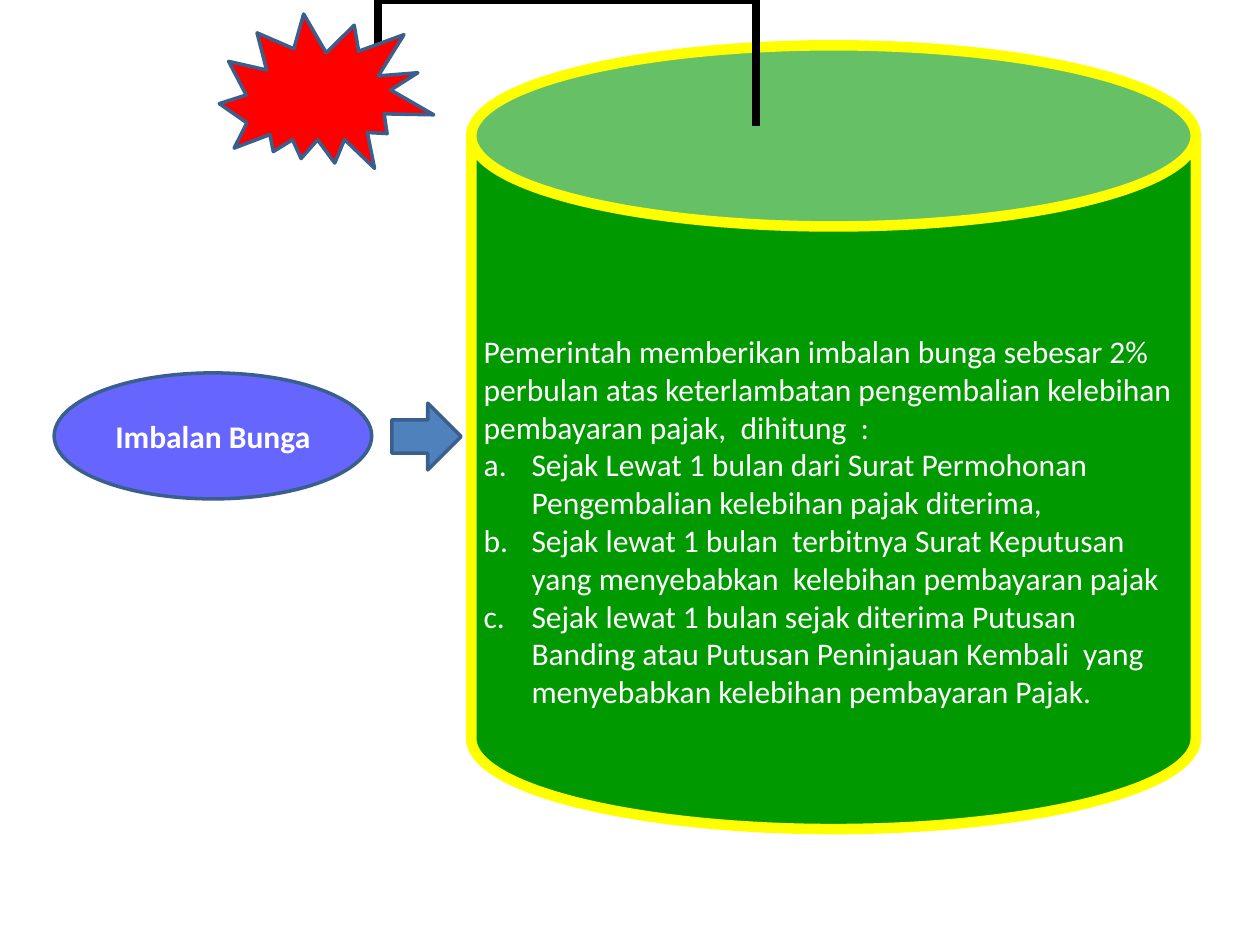
from lxml import etree
from pptx import Presentation
from pptx.dml.color import RGBColor
from pptx.enum.shapes import MSO_SHAPE
from pptx.enum.text import MSO_ANCHOR, PP_ALIGN
from pptx.oxml.ns import qn
from pptx.util import Inches, Pt

OVAL, ARROW = MSO_SHAPE.OVAL, MSO_SHAPE.RIGHT_ARROW
CAN, BURST = MSO_SHAPE.CAN, MSO_SHAPE.EXPLOSION2
LEFT, CENTER, MIDDLE = PP_ALIGN.LEFT, PP_ALIGN.CENTER, MSO_ANCHOR.MIDDLE

# Content
TOPIC = "Imbalan Bunga"
INTRO = ("Pemerintah memberikan imbalan bunga sebesar 2%  perbulan atas keterlambatan "
         "pengembalian kelebihan pembayaran pajak,  dihitung  :")
CONDITIONS = [
    "Sejak Lewat 1 bulan dari Surat Permohonan Pengembalian kelebihan pajak diterima,",
    "Sejak lewat 1 bulan  terbitnya Surat Keputusan yang menyebabkan  kelebihan "
    "pembayaran pajak",
    "Sejak lewat 1 bulan sejak diterima Putusan Banding atau Putusan Peninjauan Kembali  "
    "yang menyebabkan kelebihan pembayaran Pajak.",
]

# Fuse: start point, then cubic curves as (control, control, end)
FUSE_START = (6.36, 1.02)
FUSE_CURVES = [
    ((6.3, 0.72), (6.23, 0.42), (5.74, 0.29)),
    ((5.25, 0.16), (3.42, 0.24), (3.42, 0.24)),
    ((3.36, 0.24), (3.15, 0.21), (3.03, 0.24)),
    ((2.91, 0.28), (2.71, 0.44), (2.71, 0.44)),
    ((2.69, 0.48), (2.59, 0.63), (2.58, 0.67)),
    ((2.57, 0.71), (2.64, 0.69), (2.65, 0.68)),
    ((2.67, 0.68), (2.67, 0.66), (2.67, 0.64)),
]
CURVE_STEPS = 16
OUTLINE = "3A5F8C"


def color(hex_value):
    return RGBColor.from_string(hex_value)


def style(shape, fill, line, width):
    shape.shadow.inherit = False
    if fill:
        shape.fill.solid()
        shape.fill.fore_color.rgb = color(fill)
    else:
        shape.fill.background()
    shape.line.color.rgb = color(line)
    shape.line.width = Pt(width)


def add_preset(preset, box, fill, line=OUTLINE, width=2):
    shape = slide.shapes.add_shape(preset, *map(Inches, box))
    style(shape, fill, line, width)
    return shape


def write(shape, lines, align, bold=False):
    frame = shape.text_frame
    frame.word_wrap = True
    frame.vertical_anchor = MIDDLE
    for index, line in enumerate(lines):
        paragraph = frame.add_paragraph() if index else frame.paragraphs[0]
        paragraph.alignment = align
        run = paragraph.add_run()
        run.text = line
        run.font.color.rgb = color("FFFFFF")
        font_format = {"name": "Calibri", "size": Pt(18), "bold": bold}
        for attribute, value in font_format.items():
            setattr(run.font, attribute, value)
    return frame


def letter(paragraph):
    properties = paragraph._p.get_or_add_pPr()
    properties.set("marL", str(Inches(0.38)))
    properties.set("indent", str(-Inches(0.38)))
    etree.SubElement(properties, qn("a:buFont"), typeface="+mj-lt")
    etree.SubElement(properties, qn("a:buAutoNum"), type="alphaLcPeriod")


def curve_points(start, curves):
    for first, second, end in curves:
        for step in range(1, CURVE_STEPS + 1):
            t = step / CURVE_STEPS
            weights = ((1 - t) ** 3, 3 * t * (1 - t) ** 2, 3 * t * t * (1 - t), t ** 3)
            corners = (start, first, second, end)
            yield tuple(sum(w * p[axis] for w, p in zip(weights, corners))
                        for axis in (0, 1))
        start = end


prs = Presentation()
prs.slide_width, prs.slide_height = Inches(10), Inches(7.5)
slide = prs.slides.add_slide(prs.slide_layouts[6])

# Topic and arrow
topic = add_preset(OVAL, (0.43, 2.96, 2.52, 1), "6666FF")
write(topic, [TOPIC], CENTER, bold=True)
add_preset(ARROW, (3.11, 3.2, 0.55, 0.53), "4F81BD")

# Can with the rule and its conditions
can = add_preset(CAN, (3.74, 0.36, 5.75, 6.22), "009900", "FFFF00", 6)
rule = write(can, [INTRO, *CONDITIONS], LEFT)
rule.margin_top = Inches(0.66)
for condition in rule.paragraphs[1:]:
    letter(condition)

# Fuse
builder = slide.shapes.build_freeform(*FUSE_START, scale=Inches(1))
builder.add_line_segments(curve_points(FUSE_START, FUSE_CURVES), close=False)
style(builder.convert_to_shape(), None, "000000", 4.5)

# Spark
spark = add_preset(BURST, (1.78, 0.04, 1.63, 1.44), "FF0000")
spark.rotation = 28.9

prs.save("out.pptx")
